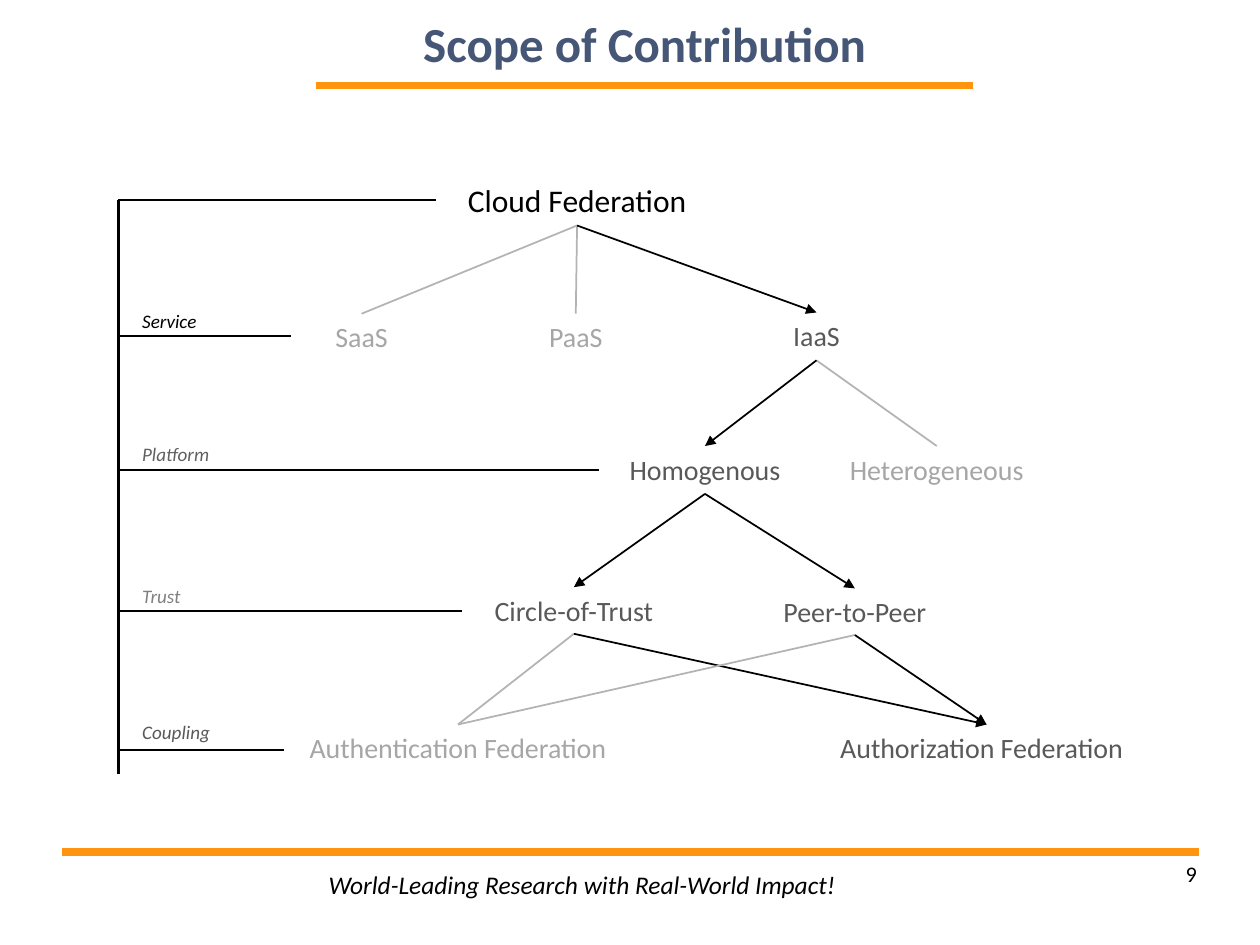
from dataclasses import dataclass

from lxml.etree import SubElement
from pptx import Presentation
from pptx.dml.color import RGBColor
from pptx.enum.shapes import MSO_CONNECTOR
from pptx.enum.text import MSO_ANCHOR, MSO_AUTO_SIZE, PP_ALIGN
from pptx.oxml.ns import qn
from pptx.util import Inches, Pt


@dataclass(frozen=True)
class Theme:
    font: str = "Calibri"
    title: str = "465676"
    accent: str = "FF950E"
    black: str = "000000"
    in_scope: str = "595959"
    platform: str = "606060"
    trust: str = "808080"
    out_of_scope: str = "A6A6A6"
    faint_line: str = "B3B3B3"
    title_size: float = 28
    root_size: float = 18
    node_size: float = 16
    footer_size: float = 14.5
    number_size: float = 12.7
    level_size: float = 10.9
    rule_width: float = 4.31
    level_width: float = 1.25
    edge_width: float = 1


def write_text(shape, text, *, font, size, color, bold=False, italic=False,
               align=PP_ALIGN.LEFT, anchor=MSO_ANCHOR.TOP, wrap=True,
               inset=None, fit=MSO_AUTO_SIZE.NONE):
    frame = shape.text_frame
    frame.word_wrap = wrap
    frame.auto_size = fit
    frame.vertical_anchor = anchor
    if inset is not None:
        frame.margin_left = frame.margin_right = Inches(inset)
        frame.margin_top = frame.margin_bottom = Inches(inset)
    para = frame.paragraphs[0]
    para.alignment = align
    span = para.add_run()
    span.text = text
    span.font.name = font
    span.font.size = Pt(size)
    span.font.bold = bold
    span.font.italic = italic
    span.font.color.rgb = RGBColor.from_string(color)


class SlideBuilder:
    def __init__(self, page, theme):
        self.page = page
        self.theme = theme

    def title(self, text, left, top, width, height):
        box = self.page.shapes.title
        box.left, box.top = Inches(left), Inches(top)
        box.width, box.height = Inches(width), Inches(height)
        write_text(box, text, font=self.theme.font, size=self.theme.title_size,
                   color=self.theme.title, bold=True, align=PP_ALIGN.CENTER,
                   anchor=MSO_ANCHOR.MIDDLE, inset=0)

    def text(self, text, left, top, width, height, **style):
        box = self.page.shapes.add_textbox(
            Inches(left), Inches(top), Inches(width), Inches(height))
        write_text(box, text, font=self.theme.font, **style)
        return box

    def line(self, start, end, color, width):
        connector = self.page.shapes.add_connector(
            MSO_CONNECTOR.STRAIGHT, *(Inches(value) for value in (*start, *end)))
        connector.line.color.rgb = RGBColor.from_string(color)
        connector.line.width = Pt(width)
        SubElement(connector._element.spPr, qn("a:effectLst"))
        return connector

    def edge(self, parent, child, in_scope):
        """Join parent's bottom to child's top; edges in scope are black arrows."""
        color = self.theme.black if in_scope else self.theme.faint_line
        connector = self.line((0, 0), (0, 0), color, self.theme.edge_width)
        connector.begin_connect(parent, 2)
        connector.end_connect(child, 0)
        if in_scope:
            SubElement(connector.line._get_or_add_ln(), qn("a:tailEnd"), type="triangle")

    def level(self, y, end, label=None, label_top=0, color=None):
        """Draw a branch from the spine, with its label above it."""
        self.line((SPINE_X, y), (end, y), self.theme.black, self.theme.level_width)
        if label:
            self.text(label, 1.03, label_top, 0.87, 0.28, color=color,
                      size=self.theme.level_size, italic=True,
                      fit=MSO_AUTO_SIZE.SHAPE_TO_FIT_TEXT)


THEME = Theme()
SPINE_X = 0.94

LEVELS = [
    (1.59, 3.46),
    (2.67, 2.31, "Service", 2.41, THEME.black),
    (3.73, 4.75, "Platform", 3.46, THEME.platform),
    (4.85, 3.67, "Trust", 4.59, THEME.trust),
    (5.95, 2.25, "Coupling", 5.67, THEME.in_scope),
]

# name, left, top, width, height, in scope
NODES = [
    ("SaaS", 2.48, 2.49, 0.78, 0.38, False),
    ("PaaS", 4.23, 2.49, 0.68, 0.38, False),
    ("IaaS", 6.14, 2.48, 0.68, 0.38, True),
    ("Homogenous", 4.85, 3.54, 1.49, 0.38, True),
    ("Heterogeneous", 6.62, 3.54, 1.63, 0.38, False),
    ("Circle-of-Trust", 3.78, 4.66, 1.55, 0.37, True),
    ("Peer-to-Peer", 5.59, 4.67, 2.39, 0.37, True),
    ("Authentication Federation", 2.3, 5.75, 2.67, 0.37, False),
    ("Authorization Federation", 6.57, 5.75, 2.52, 0.37, True),
]

CHILDREN = {
    "Cloud Federation": ["SaaS", "PaaS", "IaaS"],
    "IaaS": ["Heterogeneous", "Homogenous"],
    "Homogenous": ["Circle-of-Trust", "Peer-to-Peer"],
    "Circle-of-Trust": ["Authentication Federation", "Authorization Federation"],
    "Peer-to-Peer": ["Authentication Federation", "Authorization Federation"],
}


def draw_frame(builder):
    for start, end in [((2.51, 0.68), (7.72, 0.68)), ((0.49, 6.76), (9.52, 6.76))]:
        builder.line(start, end, THEME.accent, THEME.rule_width)
    builder.title("Scope of Contribution", 2.2, 0, 5.83, 0.68)
    builder.text("9", 7.17, 6.83, 2.33, 0.51, size=THEME.number_size,
                 color=THEME.black, align=PP_ALIGN.RIGHT, inset=0)
    builder.text("World-Leading Research with Real-World Impact!",
                 2.51, 6.85, 4.27, 0.35, size=THEME.footer_size, color=THEME.black,
                 italic=True, wrap=False, fit=MSO_AUTO_SIZE.SHAPE_TO_FIT_TEXT)


def draw_tree(builder):
    builder.line((SPINE_X, 1.59), (SPINE_X, 6.14), THEME.black, THEME.level_width)
    for level in LEVELS:
        builder.level(*level)

    fit = MSO_AUTO_SIZE.SHAPE_TO_FIT_TEXT
    boxes = {"Cloud Federation": builder.text(
        "Cloud Federation", 3.59, 1.39, 1.98, 0.4, size=THEME.root_size,
        color=THEME.black, align=PP_ALIGN.CENTER, fit=fit)}
    in_scope = {}
    for name, *place, scoped in NODES:
        in_scope[name] = scoped
        align = PP_ALIGN.LEFT if name == "Authorization Federation" else PP_ALIGN.CENTER
        boxes[name] = builder.text(
            name, *place, size=THEME.node_size, align=align, fit=fit,
            color=THEME.in_scope if scoped else THEME.out_of_scope)
    for parent, children in CHILDREN.items():
        for child in children:
            builder.edge(boxes[parent], boxes[child], in_scope[child])


def main():
    deck = Presentation()
    deck.slide_width, deck.slide_height = Inches(10), Inches(7.5)
    page = deck.slides.add_slide(deck.slide_layouts.get_by_name("Title Only"))
    builder = SlideBuilder(page, THEME)
    draw_frame(builder)
    draw_tree(builder)
    deck.save("out.pptx")


if __name__ == "__main__":
    main()
